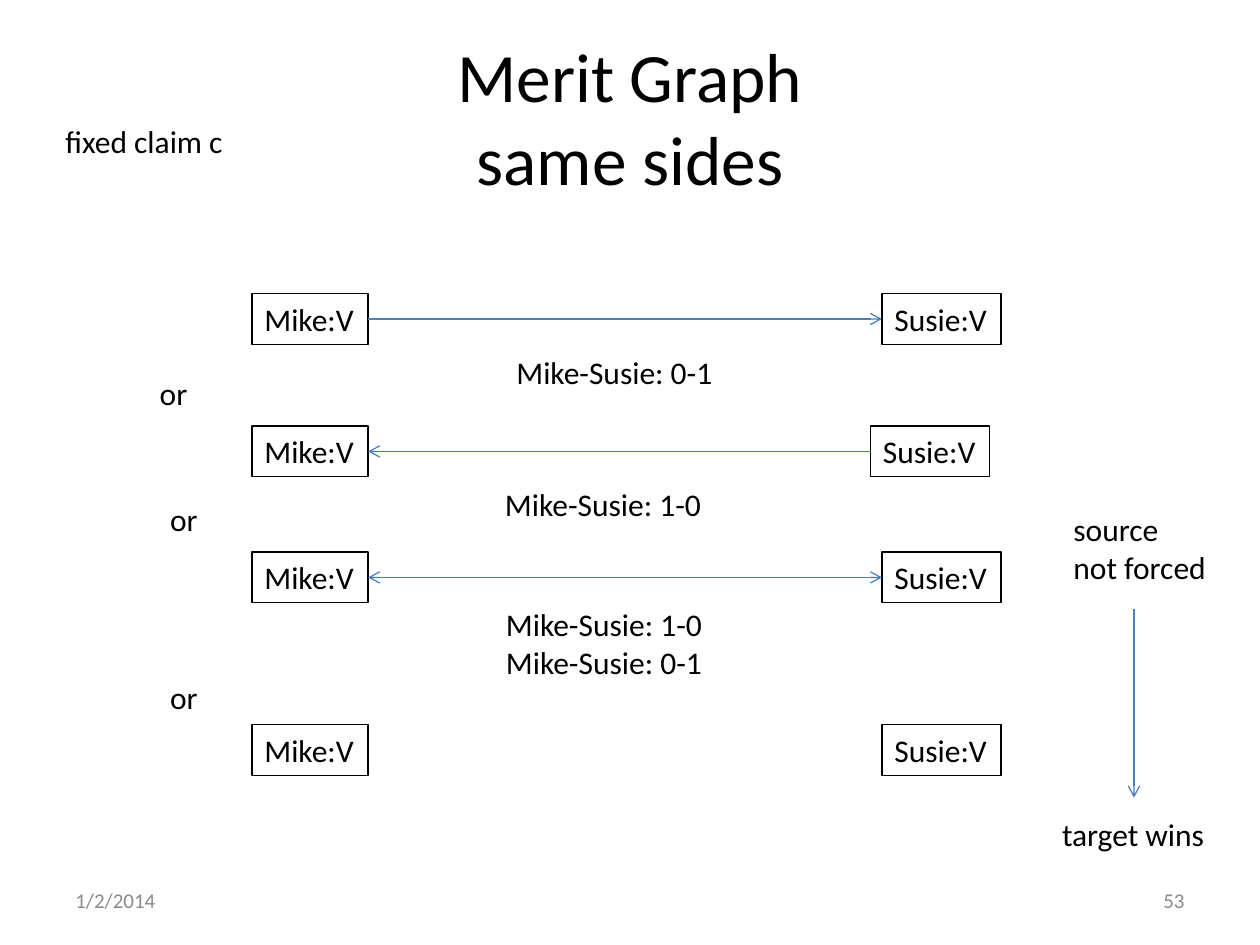
from dataclasses import dataclass

from lxml import etree
from pptx import Presentation
from pptx import util as u
from pptx.dml.color import RGBColor
from pptx.enum import shapes, text
from pptx.oxml.ns import qn


@dataclass(frozen=True)
class Theme:
    font: str = "Calibri"
    ink: str = "000000"
    blue: str = "4B7EBC"
    gray: str = "8B8B8B"
    head: float = 39.6
    body: float = 18
    small: float = 12
    line: float = 0.75


class Board:
    """Holds the theme and the current slide."""

    def __init__(self, theme, slide):
        self.theme = theme
        self.slide = slide

    def fill_in(self, shape, words, size, color, align=text.PP_ALIGN.LEFT):
        frame = shape.text_frame
        frame.text = words
        for para in frame.paragraphs:
            para.alignment = align
            for run in para.runs:
                run.font.name = self.theme.font
                run.font.size = u.Pt(size)
                run.font.color.rgb = RGBColor.from_string(color)
        return frame

    def fit(self, shape, words):
        frame = self.fill_in(shape, words, self.theme.body, self.theme.ink)
        frame.vertical_anchor = text.MSO_ANCHOR.TOP
        frame.word_wrap = False
        frame.auto_size = text.MSO_AUTO_SIZE.SHAPE_TO_FIT_TEXT

    def title(self, words, *box):
        shape = self.slide.shapes.title
        shape.left, shape.top, shape.width, shape.height = map(u.Cm, box)
        frame = self.fill_in(shape, words, self.theme.head, self.theme.ink,
                             text.PP_ALIGN.CENTER)
        frame.vertical_anchor = text.MSO_ANCHOR.MIDDLE

    def label(self, words, *box):
        self.fit(self.slide.shapes.add_textbox(*map(u.Cm, box)), words)

    def node(self, words, *box):
        shape = self.slide.shapes.add_shape(
            shapes.MSO_SHAPE.RECTANGLE, *map(u.Cm, box))
        shape.shadow.inherit = False
        shape.fill.background()
        shape.line.color.rgb = RGBColor.from_string(self.theme.ink)
        shape.line.width = u.Pt(self.theme.line)
        self.fit(shape, words)

    def arrow(self, *ends, tips=("tailEnd",)):
        link = self.slide.shapes.add_connector(
            shapes.MSO_CONNECTOR.STRAIGHT, *map(u.Cm, ends))
        link.line.color.rgb = RGBColor.from_string(self.theme.blue)
        link.line.width = u.Pt(self.theme.line)
        props = link.element.spPr
        for tip in tips:
            etree.SubElement(props.find(qn("a:ln")), qn(f"a:{tip}"), type="arrow")
        etree.SubElement(props, qn("a:effectLst"))

    def footer(self, words, left, align):
        shape = self.slide.shapes.add_textbox(
            *map(u.Cm, (left, 17.65, 5.93, 1.01)))
        frame = self.fill_in(shape, words, self.theme.small, self.theme.gray,
                             align)
        frame.word_wrap = True
        frame.vertical_anchor = text.MSO_ANCHOR.MIDDLE


def main():
    deck = Presentation()
    deck.slide_width, deck.slide_height = u.Cm(25.4), u.Cm(19.05)
    board = Board(Theme(), deck.slides.add_slide(deck.slide_layouts[5]))

    # Heading
    board.title("Merit Graph\vsame sides", 1.27, 0.76, 22.86, 3.18)
    board.label("fixed claim c", 1.07, 2.34, 3.73, 1.02)

    # Pairs of players: top, left of Susie, arrow tips
    mike, wide, susie, high = 5.08, 2.34, 2.4, 1.02
    rows = [
        (5.92, 17.78, ("tailEnd",)),
        (8.59, 17.55, ("headEnd",)),
        (11.13, 17.78, ("headEnd", "tailEnd")),
        (14.61, 17.78, ()),
    ]
    for top, right, tips in rows:
        board.node("Mike:V", mike, top, wide, high)
        board.node("Susie:V", right, top, susie, high)
        if tips:
            mid = top + high / 2
            board.arrow(mike + wide, mid, right, mid, tips=tips)

    # Scores under the arrows
    board.label("Mike-Susie: 0-1", 10.16, 6.99, 4.5, high)
    board.label("Mike-Susie: 1-0", 9.93, 9.65, 4.5, high)
    board.label("Mike-Susie: 1-0\nMike-Susie: 0-1", 9.95, 12.07, 4.5, 1.8)

    # Choices between the rows
    for left, top in ((2.97, 7.42), (3.18, 9.96), (3.18, 13.54)):
        board.label("or", left, top, 1.07, high)

    # Legend
    board.label("source\nnot forced", 21.39, 10.16, 3.23, 1.8)
    board.arrow(22.86, 12.27, 22.86, 16.08)
    board.label("target wins", 21.16, 16.31, 3.4, high)

    # Footer
    board.footer("1/2/2014", 1.27, text.PP_ALIGN.LEFT)
    board.footer("53", 18.2, text.PP_ALIGN.RIGHT)

    deck.save("out.pptx")


if __name__ == "__main__":
    main()
